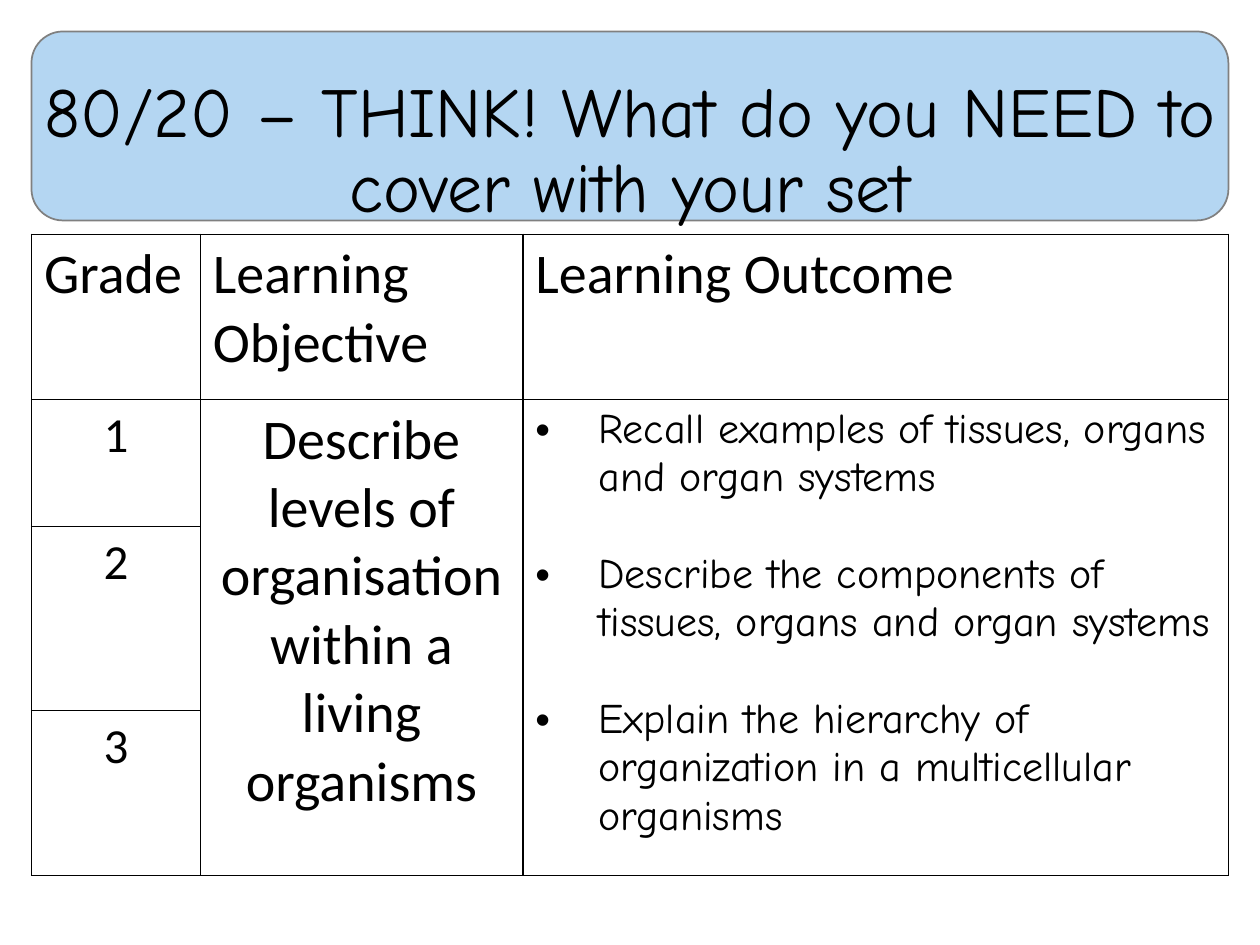
from pptx import Presentation
from pptx.dml.color import RGBColor
from pptx.enum.shapes import MSO_SHAPE
from pptx.enum.text import MSO_ANCHOR, MSO_AUTO_SIZE, PP_ALIGN
from pptx.oxml import parse_xml
from pptx.oxml.ns import nsdecls
from pptx.util import Inches, Pt

ROUNDED = MSO_SHAPE.ROUNDED_RECTANGLE
BOTTOM = MSO_ANCHOR.BOTTOM
NO_AUTOFIT = MSO_AUTO_SIZE.NONE
LEFT, CENTER = PP_ALIGN.LEFT, PP_ALIGN.CENTER

BODY_FONT, HAND_FONT = "Calibri", "Comic Neue"
BLACK, WHITE, GREY, PALE_BLUE = "000000", "FFFFFF", "808080", "B4D6F2"
MARGIN, CONTENT_WIDTH = 0.25, 9.5
COLUMN_WIDTHS = [1.34, 2.56, 5.6]
ROW_HEIGHTS = [1.31, 1.01, 1.46, 1.31]

TITLE = "80/20 – THINK! What do you NEED to cover with your set"
HEADINGS = ["Grade", "Learning Objective", "Learning Outcome"]
GRADES = ["1", "2", "3"]
OBJECTIVE = "Describe levels of organisation within a living organisms"
OUTCOMES = [
    "Recall examples of tissues, organs and organ systems",
    "Describe the components of tissues, organs and organ systems",
    "Explain the hierarchy of organization in a multicellular organisms",
]


def color(value):
    """Return the colour for a hex string."""
    return RGBColor.from_string(value)


def write(para, text, size=32, font=BODY_FONT, align=LEFT, fill=BLACK):
    """Write one formatted span of text into a paragraph."""
    para.alignment = align
    span = para.add_run()
    span.text = text
    span.font.size = Pt(size)
    span.font.name = font
    span.font.color.rgb = color(fill)


def add_bullet(para):
    """Give a paragraph a hanging bullet."""
    properties = para._p.get_or_add_pPr()
    properties.set("marL", str(Inches(0.5)))
    properties.set("indent", str(Inches(-0.5)))
    for tag in ('buFont typeface="Arial"', 'buChar char="•"'):
        properties.append(parse_xml(f"<a:{tag.split()[0]} {nsdecls('a')} {tag.split()[1]}/>"))


def style_cell(cell):
    """Give a cell a white fill and thin black borders."""
    cell.fill.solid()
    cell.fill.fore_color.rgb = color(WHITE)
    properties = cell._tc.get_or_add_tcPr()
    for index, side in enumerate("LRTB"):
        border = parse_xml(
            f'<a:ln{side} {nsdecls("a")} w="{Pt(1)}"><a:solidFill>'
            f'<a:srgbClr val="{BLACK}"/></a:solidFill></a:ln{side}>'
        )
        properties.insert(index, border)


def add_title(page):
    """Set the title over a rounded panel."""
    title = page.shapes.title
    title.left = title.top = Inches(MARGIN)
    title.width, title.height = Inches(CONTENT_WIDTH), Inches(1.61)
    frame = title.text_frame
    frame.word_wrap = True
    frame.auto_size = NO_AUTOFIT
    frame.vertical_anchor = BOTTOM
    para = frame.paragraphs[0]
    para.line_spacing = 0.9
    write(para, TITLE, size=40, font=HAND_FONT, align=CENTER)

    panel = page.shapes.add_shape(
        ROUNDED, Inches(MARGIN), Inches(MARGIN), Inches(CONTENT_WIDTH), Inches(1.5)
    )
    panel.shadow.inherit = False
    panel.fill.solid()
    panel.fill.fore_color.rgb = color(PALE_BLUE)
    panel.line.color.rgb = color(GREY)
    panel.line.width = Pt(1)
    title.element.addprevious(panel.element)


def add_outcomes(cell):
    """List the learning outcomes one blank line apart."""
    frame = cell.text_frame
    for index, outcome in enumerate(OUTCOMES):
        para = frame.add_paragraph() if index else frame.paragraphs[0]
        if index:
            para.space_before = Pt(27.6)
        write(para, outcome, size=24, font=HAND_FONT)
        add_bullet(para)


def add_grade_table(page):
    """Add the table of grades, objective and outcomes."""
    table = page.shapes.add_table(
        len(ROW_HEIGHTS), len(COLUMN_WIDTHS), Inches(MARGIN), Inches(1.86),
        Inches(CONTENT_WIDTH), Inches(sum(ROW_HEIGHTS)),
    ).table
    table.first_row = table.horz_banding = False
    for column, width in zip(table.columns, COLUMN_WIDTHS):
        column.width = Inches(width)
    for row, height in zip(table.rows, ROW_HEIGHTS):
        row.height = Inches(height)
    for cell in table.iter_cells():
        style_cell(cell)
    for column in (1, 2):
        table.cell(1, column).merge(table.cell(len(GRADES), column))

    for column, heading in enumerate(HEADINGS):
        write(table.cell(0, column).text_frame.paragraphs[0], heading)
    for row, grade in enumerate(GRADES, start=1):
        write(table.cell(row, 0).text_frame.paragraphs[0], grade, size=28, align=CENTER)
    write(table.cell(1, 1).text_frame.paragraphs[0], OBJECTIVE, align=CENTER)
    add_outcomes(table.cell(1, 2))


def main():
    """Build the deck and save it."""
    deck = Presentation()
    deck.slide_width, deck.slide_height = Inches(10), Inches(7.5)
    page = deck.slides.add_slide(deck.slide_layouts.get_by_name("Title Only"))
    add_title(page)
    add_grade_table(page)
    deck.save("out.pptx")


if __name__ == "__main__":
    main()
